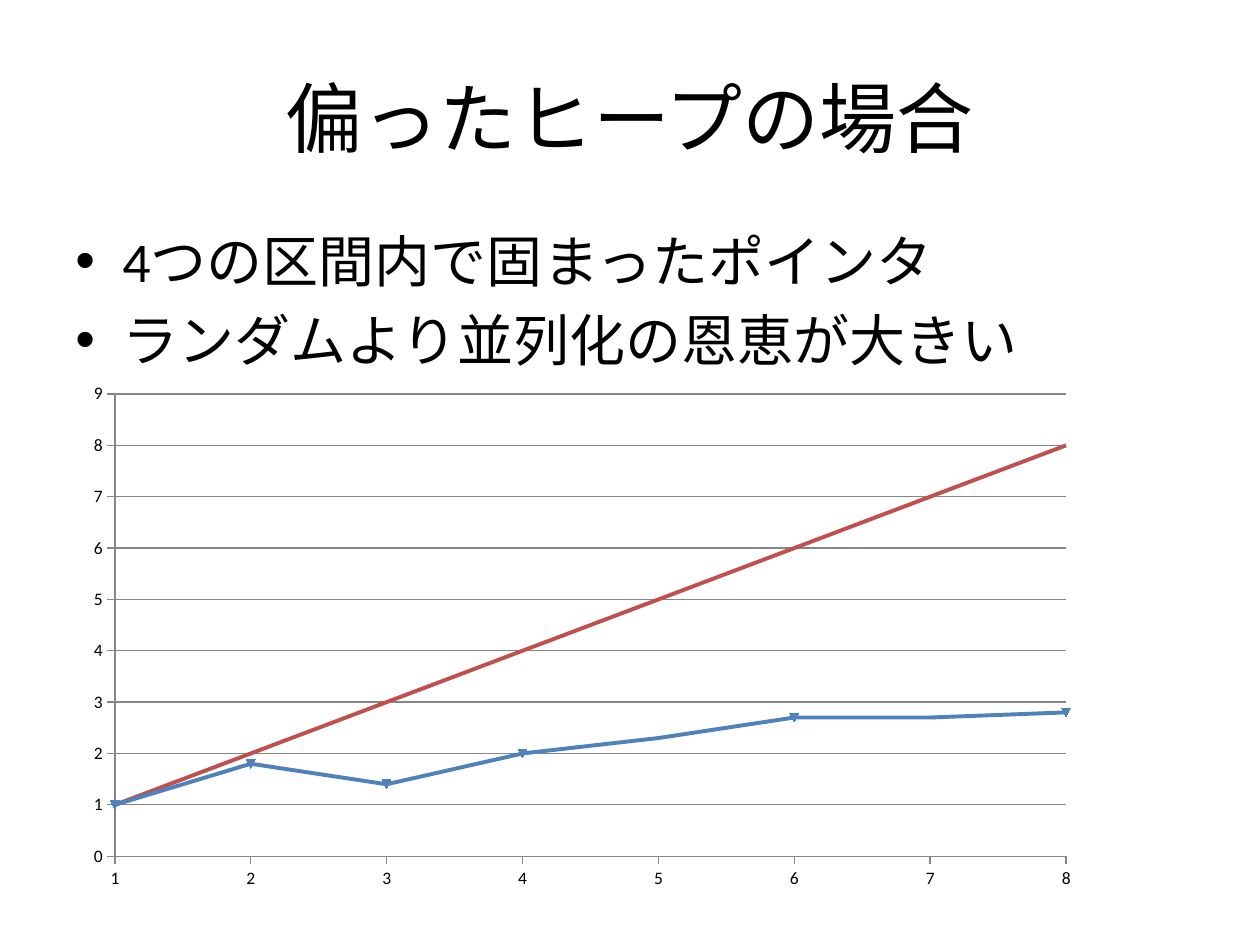
"""Builds a slide on the parallel speed-up measured for a skewed heap."""
from lxml import etree
from pptx import Presentation
from pptx.chart.data import CategoryChartData
from pptx.dml.color import RGBColor
from pptx.enum.chart import XL_CHART_TYPE, XL_MARKER_STYLE, XL_TICK_MARK
from pptx.enum.text import MSO_ANCHOR, PP_ALIGN
from pptx.oxml.ns import qn
from pptx.util import Cm, Pt

LINE_CHART = XL_CHART_TYPE.LINE_MARKERS
MARKER_NONE = XL_MARKER_STYLE.NONE
MARKER_AUTO = XL_MARKER_STYLE.AUTOMATIC
TICK_OUTSIDE = XL_TICK_MARK.OUTSIDE
TICK_NONE = XL_TICK_MARK.NONE
MIDDLE = MSO_ANCHOR.MIDDLE
CENTER = PP_ALIGN.CENTER
LEFT = PP_ALIGN.LEFT

FONT = "Calibri"
BLACK = RGBColor(0, 0, 0)
GREY = RGBColor(0x86, 0x86, 0x86)
RED = RGBColor(0xC0, 0x50, 0x4D)
BLUE = RGBColor(0x4F, 0x81, 0xBD)

TITLE = "偏ったヒープの場合"
BULLETS = ["4つの区間内で固まったポインタ", "ランダムより並列化の恩恵が大きい"]
THREADS = [str(count) for count in range(1, 9)]
SERIES = [
    ("Series 1", range(1, 9), RED, 2.25, MARKER_NONE),
    ("Series 2", [1, 1.8, 1.4, 2, 2.3, 2.7, 2.7, 2.8], BLUE, 2.25, MARKER_NONE),
    ("Series 3", [1, 1.8, 1.4, 2, None, 2.7, None, 2.8], BLUE, 0.75, MARKER_AUTO),
]
PLOT_LAYOUT = {"x": 0.04, "y": 0.04, "w": 0.94, "h": 0.88}


def style_font(font, size):
    font.name = FONT
    font.size = Pt(size)
    font.color.rgb = BLACK


def add_text(slide, lines, top, height, size, alignment):
    shape = slide.shapes.add_textbox(Cm(1.27), top, Cm(22.86), height)
    text_frame = shape.text_frame
    text_frame.word_wrap = True
    text_frame.text = "\n".join(lines)
    for paragraph in text_frame.paragraphs:
        paragraph.alignment = alignment
        for run in paragraph.runs:
            style_font(run.font, size)
    return text_frame


def add_bullet(paragraph):
    paragraph.space_before = Pt(6.4)
    properties = paragraph._p.get_or_add_pPr()
    properties.set("marL", str(Cm(0.95)))
    properties.set("indent", str(Cm(-0.95)))
    etree.SubElement(properties, qn("a:buFont")).set("typeface", "Arial")
    etree.SubElement(properties, qn("a:buChar")).set("char", "•")


def style_axis(axis, has_gridlines):
    axis.major_tick_mark = TICK_OUTSIDE
    axis.minor_tick_mark = TICK_NONE
    axis.has_major_gridlines = has_gridlines
    lines = [axis.format.line]
    if has_gridlines:
        lines.append(axis.major_gridlines.format.line)
    for line in lines:
        line.color.rgb = GREY
        line.width = Pt(0.75)


def start_on_axis(value_axis):
    element = value_axis._element
    crossing = element.find(qn("c:crossBetween"))
    if crossing is None:
        crossing = etree.Element(qn("c:crossBetween"))
        element.find(qn("c:crosses")).addnext(crossing)
    crossing.set("val", "midCat")


def place_plot(chart):
    plot_area = chart._chartSpace.chart.plotArea
    layout = plot_area.find(qn("c:layout"))
    if layout is None:
        layout = etree.Element(qn("c:layout"))
        plot_area.insert(0, layout)
    manual = etree.SubElement(layout, qn("c:manualLayout"))
    settings = {"layoutTarget": "inner", "xMode": "edge", "yMode": "edge", **PLOT_LAYOUT}
    for name, value in settings.items():
        etree.SubElement(manual, qn(f"c:{name}")).set("val", str(value))


def add_speedup_chart(slide):
    data = CategoryChartData()
    data.categories = THREADS
    for name, values, *_ in SERIES:
        data.add_series(name, values)
    chart = slide.shapes.add_chart(
        LINE_CHART, Cm(1.5), Cm(7.52), Cm(20.4), Cm(10.59), data
    ).chart
    style_font(chart.font, 10)
    chart.has_legend = False
    chart.has_title = False
    chart.plots[0].vary_by_categories = False
    for series, (_, _, color, width, marker) in zip(chart.plots[0].series, SERIES):
        series.smooth = False
        series.format.line.color.rgb = color
        series.format.line.width = Pt(width)
        series.marker.style = marker
        if marker == MARKER_AUTO:
            series.marker.size = 5
            series.marker.format.fill.solid()
            series.marker.format.fill.fore_color.rgb = color
            series.marker.format.line.color.rgb = color
    style_axis(chart.category_axis, False)
    style_axis(chart.value_axis, True)
    chart.value_axis.minimum_scale = 0
    chart.value_axis.maximum_scale = 9
    chart.value_axis.major_unit = 1
    start_on_axis(chart.value_axis)
    place_plot(chart)


def main():
    presentation = Presentation()
    presentation.slide_width = Cm(25.4)
    presentation.slide_height = Cm(19.05)
    slide = presentation.slides.add_slide(presentation.slide_layouts[6])
    title = add_text(slide, [TITLE], Cm(0.76), Cm(3.18), 44, CENTER)
    title.vertical_anchor = MIDDLE
    body = add_text(slide, BULLETS, Cm(4.45), Cm(12.57), 32, LEFT)
    for paragraph in body.paragraphs:
        add_bullet(paragraph)
    add_speedup_chart(slide)
    presentation.save("out.pptx")


if __name__ == "__main__":
    main()
